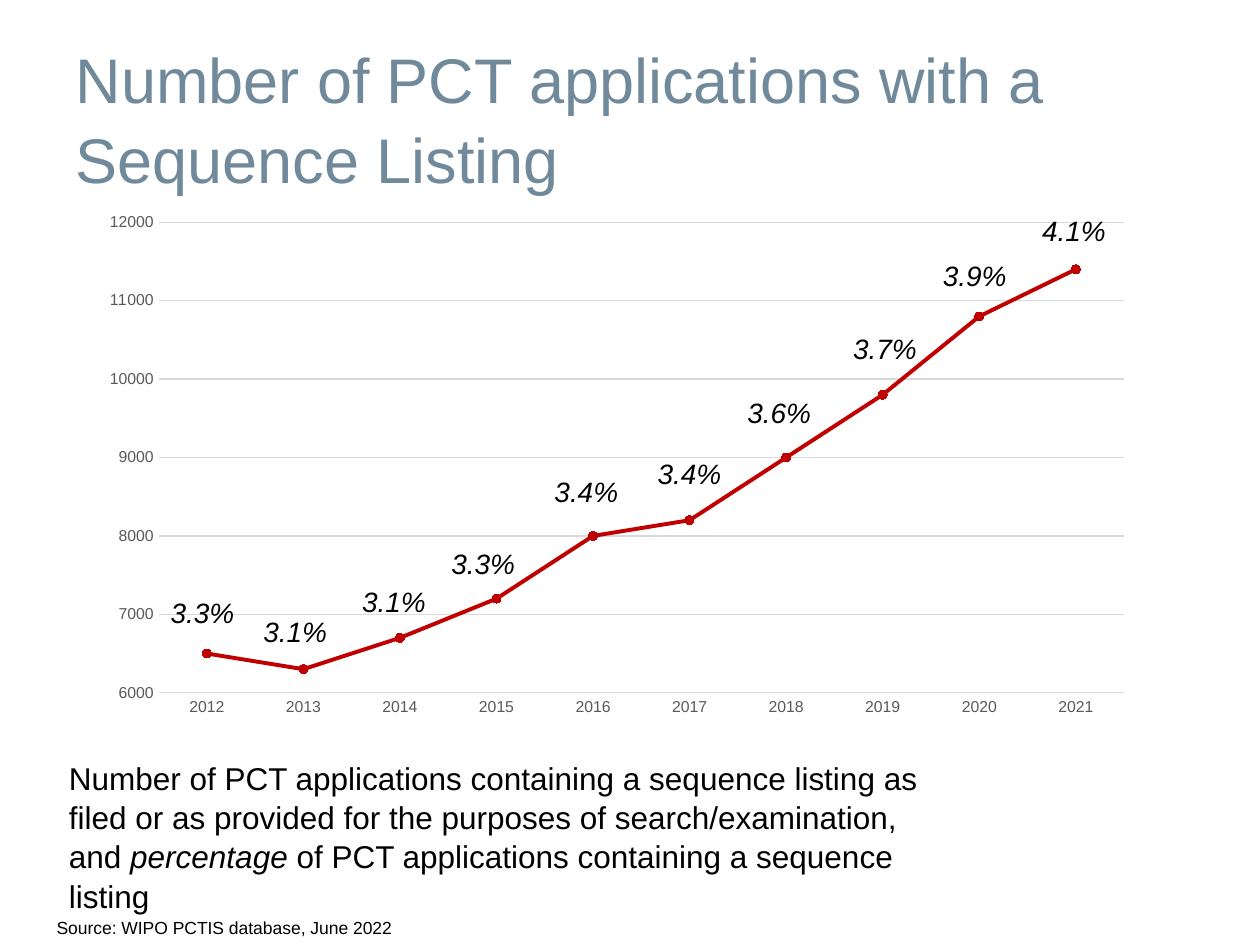
"""Build a slide charting PCT applications that contain a sequence listing."""
import pptx
import pptx.chart.data
import pptx.dml.color
import pptx.enum.chart
import pptx.enum.text
import pptx.oxml
import pptx.oxml.ns
import pptx.util

Cm = pptx.util.Cm
Pt = pptx.util.Pt
RGBColor = pptx.dml.color.RGBColor
Align = pptx.enum.text.PP_ALIGN
Anchor = pptx.enum.text.MSO_ANCHOR
AutoSize = pptx.enum.text.MSO_AUTO_SIZE

FONT = "Arial"
BLACK = RGBColor(0x00, 0x00, 0x00)
RED = RGBColor(0xC0, 0x00, 0x00)
SLATE = RGBColor(0x70, 0x89, 0x9B)
GREY = RGBColor(0x59, 0x59, 0x59)
LIGHT_GREY = RGBColor(0xD9, 0xD9, 0xD9)

TITLE = "Number of PCT applications with a Sequence Listing"
CAPTION = [
    ("Number of PCT applications containing a sequence listing as filed or as "
     "provided for the purposes of search/examination, and ", False),
    ("percentage", True),
    (" of PCT applications containing a sequence listing", False),
]
SOURCE = "Source: WIPO PCTIS database, June 2022"

# year, applications, share, label left and top in cm
YEARS = [
    ("2012", 6500, "3.3%", 3.18, 11.89),
    ("2013", 6300, "3.1%", 5.05, 12.27),
    ("2014", 6700, "3.1%", 7.04, 11.66),
    ("2015", 7200, "3.3%", 8.84, 10.9),
    ("2016", 8000, "3.4%", 10.92, 9.45),
    ("2017", 8200, "3.4%", 13, 9.07),
    ("2018", 9000, "3.6%", 14.81, 7.85),
    ("2019", 9800, "3.7%", 16.94, 6.55),
    ("2020", 10800, "3.9%", 18.75, 5.08),
    ("2021", 11400, "4.1%", 20.75, 4.19),
]
LABEL_SIZE = (1.8, 0.94)
PLOT_LAYOUT = {"x": 0.07, "y": 0.04, "w": 0.91, "h": 0.9}


def write_text(shape, text, size, color=BLACK, italic=False, align=Align.LEFT,
               anchor=Anchor.TOP, wrap=True, auto_size=AutoSize.SHAPE_TO_FIT_TEXT,
               line_spacing=None):
    """Write a string, or a list of (string, italic) runs, into a shape."""
    frame = shape.text_frame
    frame.word_wrap = wrap
    frame.auto_size = auto_size
    frame.vertical_anchor = anchor
    paragraph = frame.paragraphs[0]
    paragraph.alignment = align
    paragraph.line_spacing = line_spacing
    runs = [(text, italic)] if isinstance(text, str) else text
    for content, slanted in runs:
        run = paragraph.add_run()
        run.text = content
        run.font.name = FONT
        run.font.size = Pt(size)
        run.font.italic = slanted
        run.font.color.rgb = color


def add_text(slide, box, text, **text_format):
    """Add a text box whose left, top, width and height are in cm."""
    shape = slide.shapes.add_textbox(*map(Cm, box))
    write_text(shape, text, **text_format)


def style_line(line, color, width):
    """Give a line a solid colour and a width in points."""
    line.color.rgb = color
    line.width = Pt(width)


def style_axis(axis):
    """Give an axis small grey labels without tick marks."""
    axis.major_tick_mark = pptx.enum.chart.XL_TICK_MARK.NONE
    axis.minor_tick_mark = pptx.enum.chart.XL_TICK_MARK.NONE
    font = axis.tick_labels.font
    font.name = FONT
    font.size = Pt(9)
    font.color.rgb = GREY


def fix_plot_area(chart):
    """Pin the inner plot area to fractions of the chart."""
    qn = pptx.oxml.ns.qn
    plot_area = chart.element.find(".//" + qn("c:plotArea"))
    for layout in plot_area.findall(qn("c:layout")):
        plot_area.remove(layout)
    modes = "".join(f'<c:{key}Mode val="edge"/>' for key in "xy")
    values = "".join(f'<c:{key} val="{value}"/>' for key, value in PLOT_LAYOUT.items())
    plot_area.insert(0, pptx.oxml.parse_xml(
        f'<c:layout {pptx.oxml.ns.nsdecls("c")}><c:manualLayout>'
        f'<c:layoutTarget val="inner"/>{modes}{values}</c:manualLayout></c:layout>'))


def add_line_chart(slide):
    """Add the line chart of applications per year."""
    data = pptx.chart.data.CategoryChartData()
    data.categories = [year[0] for year in YEARS]
    data.add_series("Series 1", [year[1] for year in YEARS])
    chart = slide.shapes.add_chart(
        pptx.enum.chart.XL_CHART_TYPE.LINE_MARKERS,
        Cm(1.7), Cm(4.06), Cm(21.39), Cm(10.54), data).chart
    chart.has_legend = False
    chart.has_title = False
    chart.font.name = FONT
    chart.font.size = Pt(10)
    chart.font.color.rgb = BLACK
    chart.plots[0].vary_by_categories = False
    fix_plot_area(chart)

    style_axis(chart.category_axis)
    style_line(chart.category_axis.format.line, LIGHT_GREY, 0.75)
    value_axis = chart.value_axis
    style_axis(value_axis)
    value_axis.minimum_scale = 6000
    value_axis.maximum_scale = 12000
    value_axis.major_unit = 1000
    value_axis.format.line.fill.background()
    style_line(value_axis.major_gridlines.format.line, LIGHT_GREY, 0.75)

    series = chart.plots[0].series[0]
    series.smooth = False
    style_line(series.format.line, RED, 2.25)
    marker = series.marker
    marker.style = pptx.enum.chart.XL_MARKER_STYLE.CIRCLE
    marker.size = 5
    marker.format.fill.solid()
    marker.format.fill.fore_color.rgb = RED
    style_line(marker.format.line, RED, 0.75)


def main():
    """Assemble and save the slide."""
    presentation = pptx.Presentation()
    presentation.slide_width = Cm(25.4)
    presentation.slide_height = Cm(19.05)
    slide = presentation.slides.add_slide(presentation.slide_layouts[5])

    add_line_chart(slide)
    title = slide.shapes.title
    title.left, title.top, title.width, title.height = map(Cm, (1.27, 0.76, 22.86, 3.18))
    write_text(title, TITLE, size=36, color=SLATE, anchor=Anchor.MIDDLE,
               auto_size=AutoSize.NONE, line_spacing=1.05)
    for _, _, share, left, top in YEARS:
        add_text(slide, (left, top, *LABEL_SIZE), share, size=16, italic=True,
                 align=Align.CENTER, wrap=False)
    add_text(slide, (1.14, 15.14, 18.42, 3.33), CAPTION, size=18, line_spacing=1.04)
    add_text(slide, (0.89, 18.36, 23.44, 0.69), SOURCE, size=10)
    presentation.save("out.pptx")


if __name__ == "__main__":
    main()
